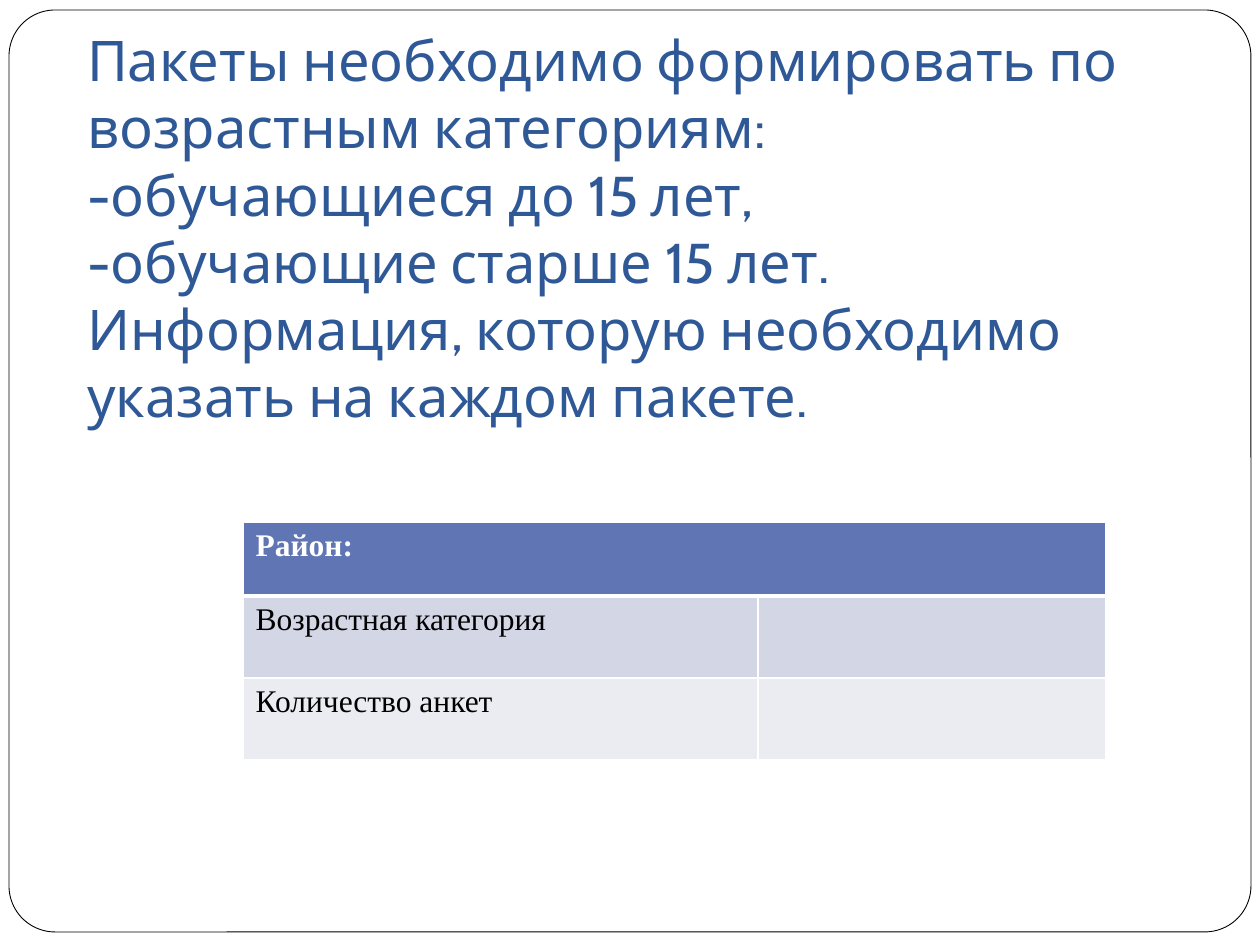
from lxml import etree
from pptx import Presentation
from pptx.dml.color import RGBColor
from pptx.enum.shapes import MSO_SHAPE
from pptx.enum.text import MSO_ANCHOR, MSO_AUTO_SIZE, PP_ALIGN
from pptx.oxml.ns import qn
from pptx.util import Emu, Pt

ROUNDED = MSO_SHAPE.ROUNDED_RECTANGLE
BOTTOM, LEFT = MSO_ANCHOR.BOTTOM, PP_ALIGN.LEFT
NO_AUTOFIT = MSO_AUTO_SIZE.NONE
PX_PER_INCH = 126
TITLE_ONLY = 5
WHITE, BLACK, TITLE_BLUE = "FFFFFF", "000000", "2F5897"

TITLE_LINES = [
    "Пакеты необходимо формировать по возрастным категориям: ",
    "-обучающиеся до 15 лет, ",
    "-обучающие старше 15 лет.",
    "Информация, которую необходимо указать на каждом пакете.",
]
# Label, fill, text colour, height in px
ROWS = [
    ("Район:", "6076B4", WHITE, 74),
    ("Возрастная категория", "D2D6E5", BLACK, 82),
    ("Количество анкет", "EAECF2", BLACK, 82),
]
COLUMN_WIDTHS = [515, 348]


def px(length):
    return Emu(round(length * 914400 / PX_PER_INCH))


def color(hex_value):
    return RGBColor.from_string(hex_value)


def place(shape, box):
    shape.left, shape.top, shape.width, shape.height = map(px, box)


def format_text(frame, font_name, size, hex_value, bold=False):
    for para in frame.paragraphs:
        para.alignment = LEFT
        for span in para.runs:
            font = span.font
            font.name, font.size, font.bold = font_name, Pt(size), bold
            font.color.rgb = color(hex_value)


def add_frame(page, box):
    frame = page.shapes.add_shape(ROUNDED, *map(px, box))
    frame.adjustments[0] = 0.05
    frame.shadow.inherit = False
    frame.fill.solid()
    frame.fill.fore_color.rgb = color(WHITE)
    frame.line.color.rgb = color(BLACK)
    frame.line.width = Pt(0.5)
    # Send the frame behind the title
    page.shapes._spTree.insert(2, frame._element)


def add_title(page, box):
    title = page.shapes.title
    place(title, box)
    frame = title.text_frame
    frame.text = "\v".join(TITLE_LINES)
    frame.word_wrap = True
    frame.auto_size = NO_AUTOFIT
    frame.vertical_anchor = BOTTOM
    frame.margin_left = frame.margin_right = frame.margin_bottom = px(13)
    frame.margin_top = px(6)
    format_text(frame, "Cabin", 32, TITLE_BLUE)


def set_borders(cell, widths):
    properties = cell._tc.get_or_add_tcPr()
    for side, width in zip(("lnL", "lnR", "lnT", "lnB"), widths):
        line = etree.SubElement(properties, qn(f"a:{side}"), w=str(Pt(width)))
        fill = etree.SubElement(line, qn("a:solidFill"))
        etree.SubElement(fill, qn("a:srgbClr"), val=WHITE)


def add_package_table(page, box):
    shape = page.shapes.add_table(len(ROWS), len(COLUMN_WIDTHS), *map(px, box))
    table = shape.table
    for column, width in zip(table.columns, COLUMN_WIDTHS):
        column.width = px(width)
    for index, (label, fill, text_color, height) in enumerate(ROWS):
        row = table.rows[index]
        row.height = px(height)
        top, bottom = (3 if index == 1 else 1), (3 if index == 0 else 1)
        for cell in row.cells:
            set_borders(cell, (1, 1, top, bottom))
            cell.fill.solid()
            cell.fill.fore_color.rgb = color(fill)
        row.cells[0].text = label
        format_text(row.cells[0].text_frame, "Times New Roman", 18,
                    text_color, bold=index == 0)
    # The heading row spans the whole width
    table.cell(0, 0).merge(table.cell(0, len(COLUMN_WIDTHS) - 1))


def main():
    deck = Presentation()
    deck.slide_width, deck.slide_height = px(1260), px(945)
    page = deck.slides.add_slide(deck.slide_layouts[TITLE_ONLY])
    add_frame(page, (9, 10, 1242, 922))
    add_title(page, (74, 38, 1131, 404))
    add_package_table(page, (243, 522, sum(COLUMN_WIDTHS),
                             sum(row[-1] for row in ROWS)))
    deck.save("out.pptx")


if __name__ == "__main__":
    main()
